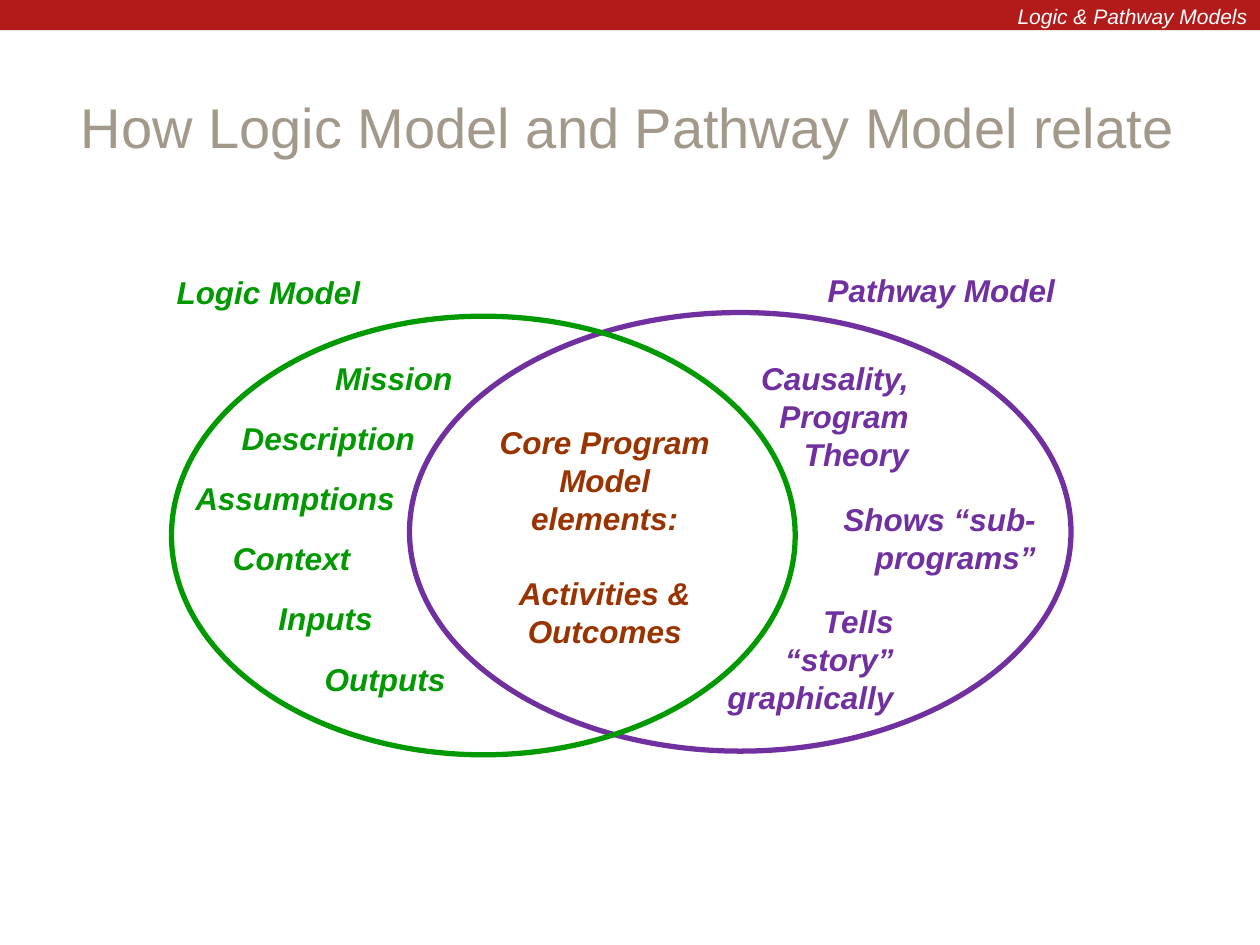
from pptx import Presentation
from pptx.dml.color import RGBColor
from pptx.enum import shapes, text
from pptx.util import Pt

COLORS = {
    "red": "B31B1B",
    "taupe": "A2998B",
    "purple": "7030A0",
    "green": "009900",
    "brown": "993300",
    "white": "FFFFFF",
}
LEFT, CENTER, RIGHT = text.PP_ALIGN.LEFT, text.PP_ALIGN.CENTER, text.PP_ALIGN.RIGHT


def color(name):
    return RGBColor.from_string(COLORS[name])


def add_text(parent, box, lines, hue, size=18, align=LEFT, bold=True, italic=True,
             wrap=True, gap=0):
    frame = parent.add_textbox(*map(Pt, box)).text_frame
    frame.word_wrap = wrap
    frame.vertical_anchor = text.MSO_ANCHOR.TOP
    for index, line in enumerate(lines):
        para = frame.paragraphs[0] if index == 0 else frame.add_paragraph()
        para.text = line
        para.alignment = align
        para.space_before = Pt(gap if index else 0)
        para.font.name = "Arial"
        para.font.size = Pt(size)
        para.font.bold = bold
        para.font.italic = italic
        para.font.color.rgb = color(hue)
    return frame


def add_ellipse(parent, box, hue):
    ellipse = parent.add_shape(shapes.MSO_SHAPE.OVAL, *map(Pt, box))
    ellipse.shadow.inherit = False
    ellipse.fill.background()
    ellipse.line.color.rgb = color(hue)
    ellipse.line.width = Pt(3)


def add_model(page, left, top, ellipse, hue, labels):
    group = page.shapes.add_group_shape().shapes
    x, y, width, height = ellipse
    add_ellipse(group, (left + x, top + y, width, height), hue)
    for (x, y, width, height), lines, align in labels:
        add_text(group, (left + x, top + y, width, height), lines, hue, align=align)


def add_logic_model(page, left, top):
    rows = [("Mission", 107.5, 86), ("Description", 54, 120), ("Assumptions", 27.5, 133),
            ("Context", 49, 87), ("Inputs", 75, 72), ("Outputs", 101.5, 88)]
    labels = [((0, 0, 136, 28.8), ["Logic Model"], RIGHT)]
    labels += [((x, 48.7 + 34.4 * row, width, 28.8), [word], LEFT)
               for row, (word, x, width) in enumerate(rows)]
    add_model(page, left, top, (21, 28, 356.4, 250.6), "green", labels)


def add_pathway_model(page, left, top):
    labels = [
        ((231.8, 0, 155.6, 28.8), ["Pathway Model"], LEFT),
        ((175, 50.4, 117.4, 72.7), ["Causality,", "Program Theory"], RIGHT),
        ((229, 131, 136, 51), ["Shows “sub-programs”"], RIGHT),
        ((171.4, 189.4, 112.3, 72.7), ["Tells “story” graphically"], RIGHT),
    ]
    add_model(page, left, top, (0, 27.4, 378, 250.6), "purple", labels)


def add_core(page, left, top):
    add_text(page.shapes, (left, top, 136.8, 138.2),
             ["Core Program Model elements:", "Activities & Outcomes"],
             "brown", align=CENTER, gap=21.6)


def add_header(page, left, top, width):
    band = page.shapes.add_shape(shapes.MSO_SHAPE.RECTANGLE,
                                 Pt(left), Pt(top), Pt(width), Pt(17.3))
    band.shadow.inherit = False
    band.fill.solid()
    band.fill.fore_color.rgb = color("red")
    band.line.fill.background()
    add_text(page.shapes, (left + width - 147, top - 1.6, 147, 21.8),
             ["Logic & Pathway Models"], "white", size=12, align=RIGHT,
             bold=False, wrap=False)


def add_title(page, left, top):
    frame = add_text(page.shapes, (left, top, 682.6, 47.5),
                     ["How Logic Model and Pathway Model relate"], "taupe",
                     size=32, align=CENTER, bold=False, italic=False)
    frame.vertical_anchor = text.MSO_ANCHOR.MIDDLE


def main():
    deck = Presentation()
    deck.slide_width, deck.slide_height = Pt(720), Pt(540)
    page = deck.slides.add_slide(deck.slide_layouts[6])
    add_header(page, 0, 0, 720)
    add_title(page, 17.5, 48.2)
    add_pathway_model(page, 234, 151.2)
    add_core(page, 277.2, 238.3)
    add_logic_model(page, 77, 152.7)
    deck.save("out.pptx")


if __name__ == "__main__":
    main()
